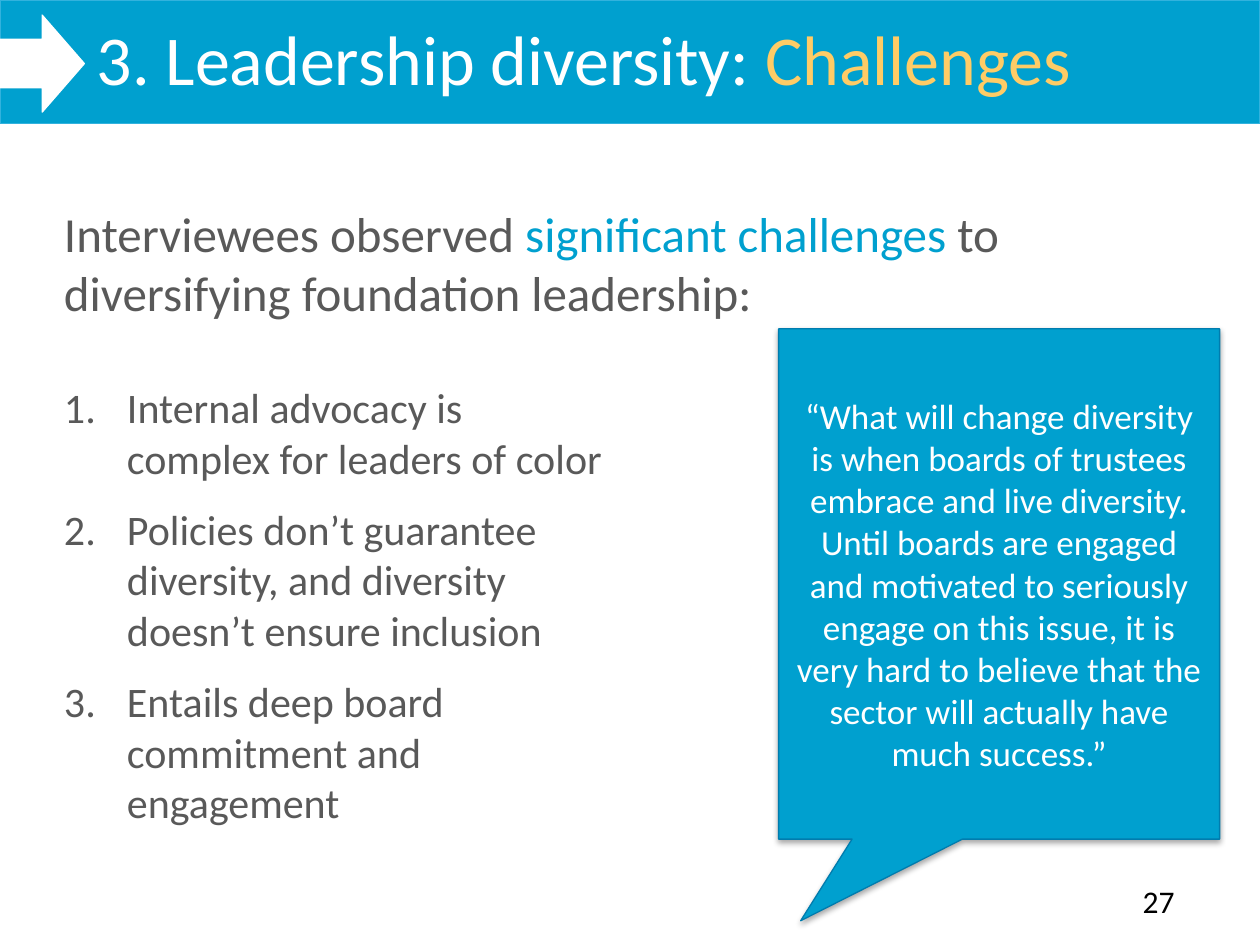
"""Build the leadership diversity challenges slide."""
from lxml.etree import SubElement
from pptx import Presentation
from pptx.dml.color import RGBColor
from pptx.enum.shapes import MSO_SHAPE
from pptx.enum.text import MSO_ANCHOR, PP_ALIGN
from pptx.oxml.ns import qn
from pptx.util import Inches, Pt

COLORS = {
    "blue": "00A0CF",
    "banner_edge": "32B2DD",
    "callout_edge": "007CAE",
    "white": "FFFFFF",
    "gold": "FFCC66",
    "gray": "595959",
    "black": "000000",
}


def add_panel(kind, place, fill, edge):
    panel = slide.shapes.add_shape(kind, *map(Inches, place))
    panel.shadow.inherit = False
    panel.fill.solid()
    panel.fill.fore_color.rgb = RGBColor.from_string(COLORS[fill])
    panel.line.color.rgb = RGBColor.from_string(COLORS[edge])
    panel.line.width = Pt(0.75)
    return panel


def write_text(box, paragraphs, size, formats):
    frame = box.text_frame
    frame.word_wrap = True
    for index, pieces in enumerate(paragraphs):
        para = frame.add_paragraph() if index else frame.paragraphs[0]
        for name, value in formats.items():
            setattr(para, name, value)
        for text, color in pieces:
            span = para.add_run()
            span.text = text
            span.font.name = "Calibri"
            span.font.size = Pt(size)
            span.font.color.rgb = RGBColor.from_string(COLORS[color])


deck = Presentation()
deck.slide_width, deck.slide_height = Inches(10), Inches(7.5)
slide = deck.slides.add_slide(deck.slide_layouts[6])

add_panel(MSO_SHAPE.RECTANGLE, (0, 0, 10, 0.98), "blue", "banner_edge")
add_panel(MSO_SHAPE.RIGHT_ARROW, (0, 0.12, 0.67, 0.77), "white", "white")

challenges = [
    "Internal advocacy is complex for leaders of color",
    "Policies don’t guarantee diversity, and diversity doesn’t ensure inclusion",
    "Entails deep board commitment and engagement",
]
title = [("3. Leadership diversity: ", "white"), ("Challenges", "gold")]
intro = [
    ("Interviewees observed ", "gray"),
    ("significant challenges ", "blue"),
    ("to diversifying foundation leadership:", "gray"),
]
spaced = {"space_after": Pt(12)}
text_boxes = [
    ((0.67, 0.07, 9.33, 1.25), [title], 40, {}),
    ((8.97, 6.95, 0.53, 0.4), [[("27", "black")]], 18, {}),
    ((0.41, 1.57, 9.26, 1.04), [intro], 28, spaced),
    ((0.41, 2.98, 4.47, 4.07), [[(item, "gray")] for item in challenges], 24, spaced),
]
for place, paragraphs, size, formats in text_boxes:
    box = slide.shapes.add_textbox(*map(Inches, place))
    write_text(box, paragraphs, size, formats)

for para in box.text_frame.paragraphs:
    properties = para._p.get_or_add_pPr()
    properties.set("marL", str(Inches(0.5)))
    properties.set("indent", str(Inches(-0.5)))
    SubElement(properties, qn("a:buFont"), typeface="+mj-lt")
    SubElement(properties, qn("a:buAutoNum"), type="arabicPeriod")

callout = add_panel(
    MSO_SHAPE.RECTANGULAR_CALLOUT, (6.18, 2.61, 3.5, 4.05), "blue", "callout_edge"
)
callout.adjustments[0] = -0.45
callout.adjustments[1] = 0.66
callout.text_frame.vertical_anchor = MSO_ANCHOR.MIDDLE
quote = (
    "“What will change diversity is when boards of trustees embrace and live "
    "diversity. Until boards are engaged and motivated to seriously engage on "
    "this issue, it is very hard to believe that the sector will actually have "
    "much success.”"
)
write_text(callout, [[(quote, "white")]], 20, {"alignment": PP_ALIGN.CENTER})

effects = callout._element.spPr.find(qn("a:effectLst"))
shadow = SubElement(
    effects,
    qn("a:outerShdw"),
    blurRad=str(Pt(3.1)),
    dist=str(Pt(1.8)),
    dir="5400000",
    rotWithShape="0",
)
shade = SubElement(shadow, qn("a:srgbClr"), val=COLORS["black"])
SubElement(shade, qn("a:alpha"), val="35000")

deck.save("out.pptx")
